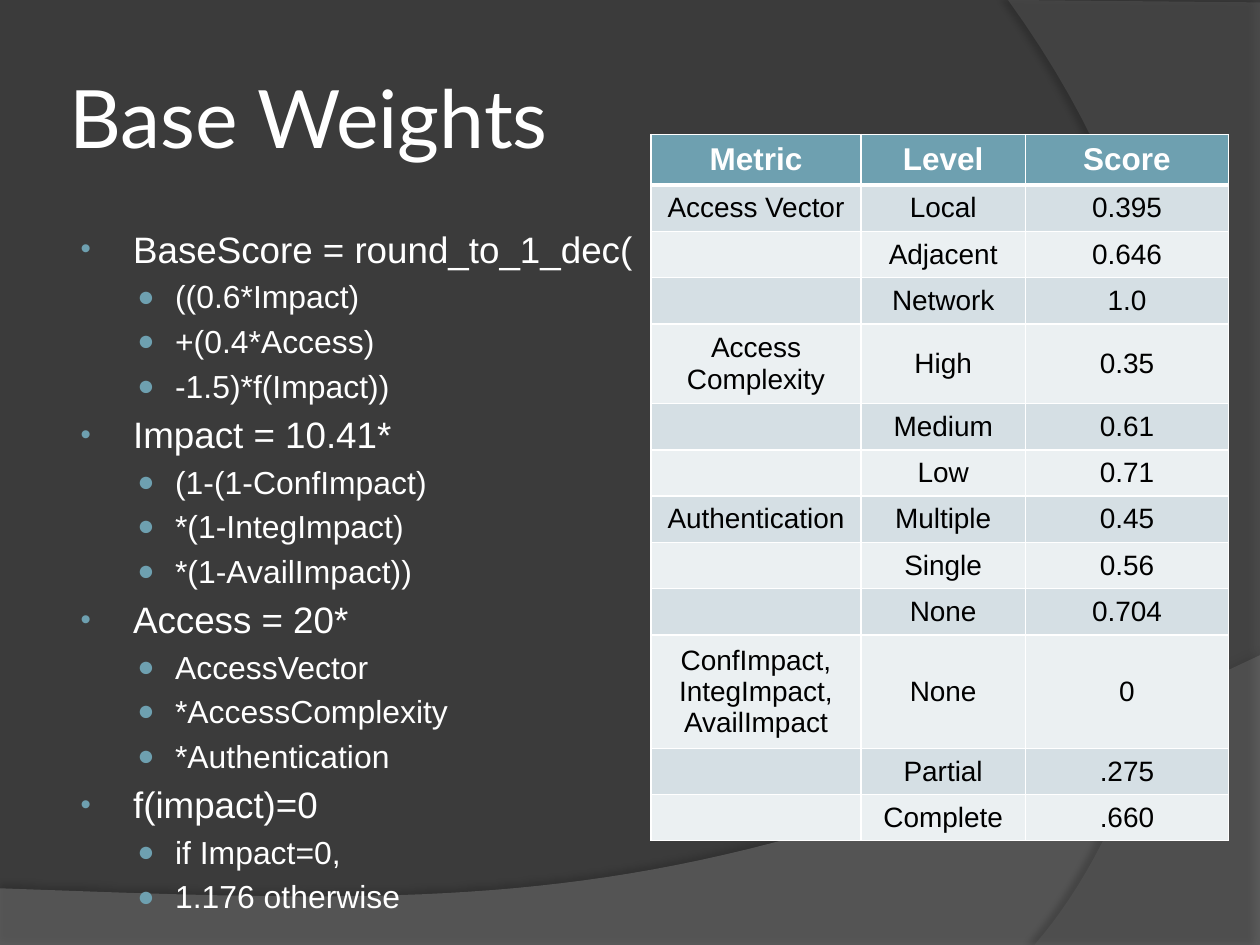
from lxml import etree
from pptx import Presentation
from pptx.dml.color import RGBColor
from pptx.enum.text import MSO_ANCHOR, PP_ALIGN
from pptx.oxml.ns import qn
from pptx.util import Pt

MIDDLE, TOP = MSO_ANCHOR.MIDDLE, MSO_ANCHOR.TOP
CENTER = PP_ALIGN.CENTER
WHITE, BLACK, TEAL = "FFFFFF", "000000", "6EA0B0"
BANDS = ("D5DFE4", "EBF0F2")

# Per level: size, left margin, hanging indent, bullet, bullet percent
LEVELS = (
    (21, 33, -30, "•", 80),
    (18.2, 57, -21.6, "●", 90),
)
FORMULAS = (
    ("BaseScore = round_to_1_dec(", "((0.6*Impact)", "+(0.4*Access)", "-1.5)*f(Impact))"),
    ("Impact = 10.41*", "(1-(1-ConfImpact)", "*(1-IntegImpact)", "*(1-AvailImpact))"),
    ("Access = 20*", "AccessVector", "*AccessComplexity", "*Authentication"),
    ("f(impact)=0", "if Impact=0,", "1.176 otherwise"),
)
WEIGHTS = (
    ("Metric", "Level", "Score"),
    ("Access Vector", "Local", "0.395"),
    ("", "Adjacent", "0.646"),
    ("", "Network", "1.0"),
    ("Access Complexity", "High", "0.35"),
    ("", "Medium", "0.61"),
    ("", "Low", "0.71"),
    ("Authentication", "Multiple", "0.45"),
    ("", "Single", "0.56"),
    ("", "None", "0.704"),
    ("ConfImpact, IntegImpact, AvailImpact", "None", "0"),
    ("", "Partial", ".275"),
    ("", "Complete", ".660"),
)


def color(code):
    return RGBColor.from_string(code)


def add(parent, tag, **attrs):
    """Append an XML child and return it."""
    node = etree.SubElement(parent, qn(tag))
    for key, value in attrs.items():
        node.set(key, str(value))
    return node


def curve(a, b, c, d, steps=48):
    """Points along a cubic Bezier from a to d."""
    points = []
    for i in range(steps + 1):
        t = i / steps
        u = 1 - t
        points.append(tuple(
            u**3 * p + 3 * u * u * t * q + 3 * u * t * t * r + t**3 * s
            for p, q, r, s in zip(a, b, c, d)))
    return points


class Deck:
    def __init__(self, slide, font="Arial", ink=WHITE):
        self.slide, self.font, self.ink = slide, font, ink

    def back(self, code):
        fill = self.slide.background.fill
        fill.solid()
        fill.fore_color.rgb = color(code)

    def wave(self, points, code, alpha, shade, dist, angle):
        """Translucent outline with a soft shadow; alpha and shade in percent."""
        spots = [(Pt(x), Pt(y)) for x, y in points]
        pen = self.slide.shapes.build_freeform(*spots[0])
        pen.add_line_segments(spots[1:], close=True)
        shape = pen.convert_to_shape()
        shape.line.fill.background()
        shape.fill.solid()
        shape.fill.fore_color.rgb = color(code)
        tint = shape.fill._xPr.find(qn("a:solidFill"))[0]
        add(tint, "a:alpha", val=alpha * 1000)
        shape.shadow.inherit = False
        effects = shape._element.spPr.find(qn("a:effectLst"))
        outer = add(effects, "a:outerShdw", blurRad=Pt(4), dist=Pt(dist),
                    dir=angle * 60000, algn="ctr", rotWithShape=0)
        add(add(outer, "a:srgbClr", val=BLACK), "a:alpha", val=shade * 1000)

    def style(self, para, size, font=None, ink=None, bold=False):
        face = para.font
        face.size, face.bold = Pt(size), bold
        face.name = font or self.font
        face.color.rgb = color(ink or self.ink)

    def box(self, x, y, w, h, anchor=TOP, inset=7.2):
        """Empty wrapping text box; returns its frame."""
        frame = self.slide.shapes.add_textbox(Pt(x), Pt(y), Pt(w), Pt(h)).text_frame
        frame.word_wrap = True
        frame.vertical_anchor = anchor
        frame.margin_left = frame.margin_right = Pt(inset)
        return frame

    def title(self, text, *area):
        para = self.box(*area, anchor=MIDDLE, inset=3.6).paragraphs[0]
        para.text = text
        self.style(para, 46, font="Lato")

    def bullet(self, para, text, level):
        size, left, hang, mark, scale = LEVELS[level]
        para.text, para.level = text, level
        para.space_before = Pt(size * 0.2)
        props = para._p.get_or_add_pPr()
        props.set("marL", str(Pt(left)))
        props.set("indent", str(Pt(hang)))
        add(add(props, "a:buClr"), "a:srgbClr", val=TEAL)
        add(props, "a:buSzPct", val=scale * 1000)
        add(props, "a:buFont", typeface=self.font)
        add(props, "a:buChar", char=mark)
        self.style(para, size)

    def outline(self, groups, *area):
        frame = self.box(*area)
        lines = [(text, min(i, 1)) for group in groups for i, text in enumerate(group)]
        for i, (text, level) in enumerate(lines):
            para = frame.add_paragraph() if i else frame.paragraphs[0]
            self.bullet(para, text, level)

    def cell(self, cell, text, row):
        head = row == 0
        size = 18 if head else 16
        cell.vertical_anchor = MIDDLE
        props = cell._tc.get_or_add_tcPr()
        for side in "LRTB":
            thick = (head and side == "B") or (row == 1 and side == "T")
            line = add(props, "a:ln" + side, w=Pt(3 if thick else 1))
            add(add(line, "a:solidFill"), "a:srgbClr", val=WHITE)
        cell.fill.solid()
        cell.fill.fore_color.rgb = color(TEAL if head else BANDS[(row - 1) % 2])
        para = cell.text_frame.paragraphs[0]
        para.alignment = CENTER
        if text:
            para.text = text
        # The end mark also counts towards the row height
        add(para._p, "a:endParaRPr", sz=size * 100)
        self.style(para, size, ink=WHITE if head else BLACK, bold=head)

    def table(self, rows, x, y, widths, height):
        grid = self.slide.shapes.add_table(
            len(rows), len(widths), Pt(x), Pt(y),
            Pt(sum(widths)), Pt(height * len(rows))).table
        for col, width in zip(grid.columns, widths):
            col.width = Pt(width)
        for r, row in enumerate(rows):
            for c, text in enumerate(row):
                self.cell(grid.cell(r, c), text, r)


def main():
    prs = Presentation()
    prs.slide_width, prs.slide_height = Pt(720), Pt(540)
    deck = Deck(prs.slides.add_slide(prs.slide_layouts[6]))
    deck.back("3B3B3B")
    swell = curve((720, 374.4), (402.5, 524.9), (281.5, 517.7), (0, 507.6))
    deck.wave([(0, 540.7), (720, 540.7)] + swell, "7F7F7F", 45, 35, 3.5, 270)
    bend = curve((591.1, 540), (673.2, 445.7), (733, 216), (576, 0))
    deck.wave([(720, 1.4), (720, 540)] + bend, "5E5E5E", 40, 45, 4, 180)
    deck.title("Base Weights", 36, 21.6, 588, 90)
    deck.outline(FORMULAS, 36, 126, 402, 372)
    deck.table(WEIGHTS, 372, 77, (120, 94, 116), 20.16)
    prs.save("out.pptx")


if __name__ == "__main__":
    main()
